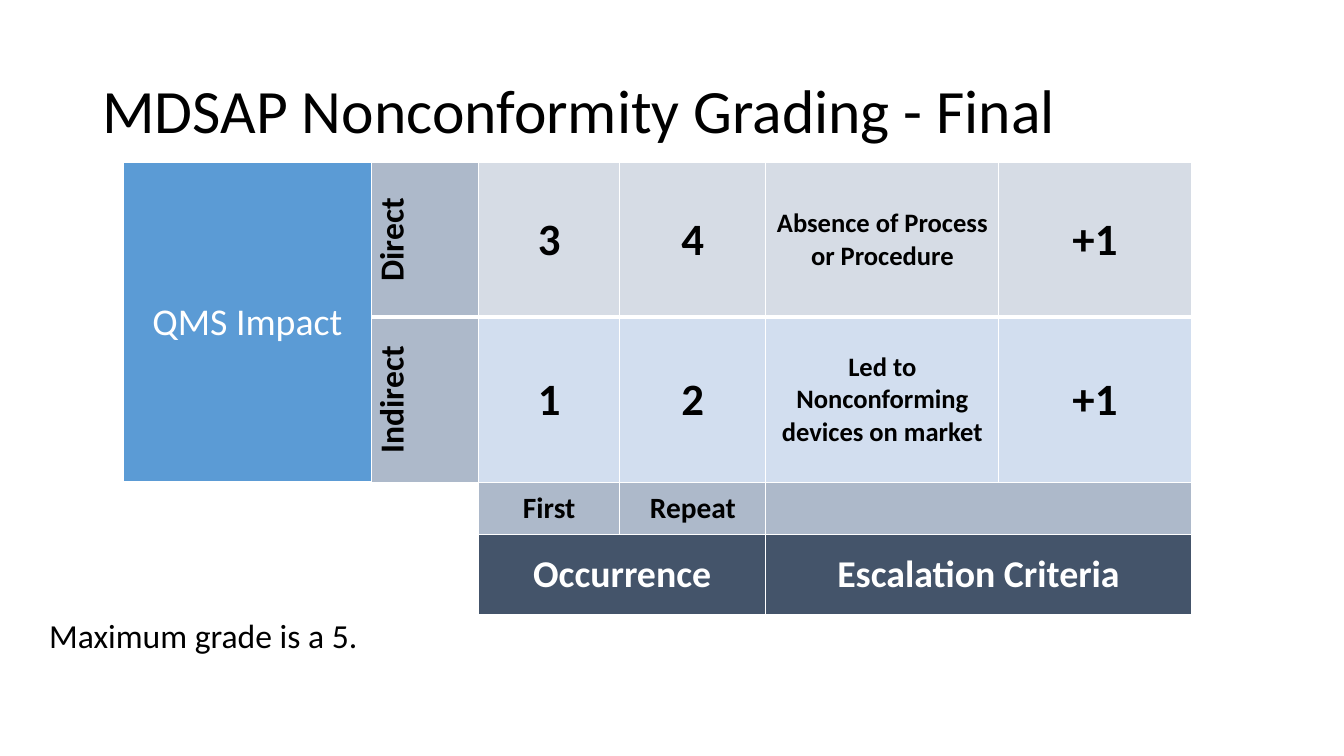
from lxml import etree
from pptx import Presentation
from pptx.dml.color import RGBColor
from pptx.enum.text import MSO_ANCHOR, PP_ALIGN
from pptx.oxml.ns import qn
from pptx.util import Cm, Pt

MIDDLE, TOP = MSO_ANCHOR.MIDDLE, MSO_ANCHOR.TOP
CENTER, LEFT = PP_ALIGN.CENTER, PP_ALIGN.LEFT

# Content
FONT = "Calibri"
COLORS = {"black": "000000", "white": "FFFFFF", "blue": "5B9BD5", "label": "ADB9CA",
          "direct": "D6DCE5", "indirect": "D2DEEF", "navy": "44546A"}
TITLE = "MDSAP Nonconformity Grading - Final"
NOTE = "Maximum grade is a 5."
GRID = [
    ["QMS Impact", "Direct", "3", "4", "Absence of Process or Procedure", "+1"],
    ["", "Indirect", "1", "2", "Led to Nonconforming devices on market", "+1"],
    ["", "", "First", "Repeat", "", ""],
    ["", "", "Occurrence", "", "Escalation Criteria", ""],
]
FILLS = [
    ["blue", "label"] + ["direct"] * 4,
    ["blue", "label"] + ["indirect"] * 4,
    ["white"] * 2 + ["label"] * 4,
    ["white"] * 2 + ["navy"] * 4,
]
GRADE_SIZES = [27, 24, 32, 32, 19, 32]
SIZES = [GRADE_SIZES, GRADE_SIZES, [21] * 6, [27] * 6]
MERGES = [((0, 0), (1, 0)), ((2, 4), (2, 5)), ((3, 2), (3, 3)), ((3, 4), (3, 5))]
COLUMN_WIDTHS = [6.27, 2.69, 3.56, 3.68, 5.87, 4.85]
ROW_HEIGHTS = [3.89, 4.17, 1.3, 2.03]


def write(frame, text, size, color="black", bold=False, align=LEFT, after=0, spacing=1.0):
    para = frame.paragraphs[0]
    para.alignment = align
    para.space_after = Pt(after)
    para.line_spacing = spacing
    span = para.add_run()
    span.text = text
    span.font.name = FONT
    span.font.size = Pt(size)
    span.font.bold = bold
    span.font.color.rgb = RGBColor.from_string(COLORS[color])


def add_text(page, text, left, top, width, height, anchor=TOP, inset=0.0, **style):
    box = page.shapes.add_textbox(Cm(left), Cm(top), Cm(width), Cm(height))
    frame = box.text_frame
    frame.word_wrap = True
    frame.vertical_anchor = anchor
    frame.margin_left = frame.margin_right = Cm(inset)
    frame.margin_top = frame.margin_bottom = Cm(inset / 2)
    write(frame, text, **style)


def set_borders(cell, bottom):
    properties = cell._tc.get_or_add_tcPr()
    widths = {"a:lnL": 1, "a:lnR": 1, "a:lnT": 1, "a:lnB": bottom}
    for index, (tag, width) in enumerate(widths.items()):
        line = etree.Element(qn(tag), w=str(Pt(width)))
        fill = etree.SubElement(line, qn("a:solidFill"))
        etree.SubElement(fill, qn("a:srgbClr"), val=COLORS["white"])
        properties.insert(index, line)


deck = Presentation()
deck.slide_width, deck.slide_height = Cm(33.87), Cm(19.05)
page = deck.slides.add_slide(deck.slide_layouts[6])

# Title and note
add_text(page, TITLE, 2.33, 1.01, 29.21, 3.68, anchor=MIDDLE, inset=0.25,
         size=44, spacing=0.9)
add_text(page, NOTE, 1.24, 15.5, 31.27, 1.2, size=24)

# Grading table
table = page.shapes.add_table(len(ROW_HEIGHTS), len(COLUMN_WIDTHS), Cm(3.1), Cm(4.1),
                              Cm(sum(COLUMN_WIDTHS)), Cm(sum(ROW_HEIGHTS))).table
table.first_row = table.horz_banding = False
for column, width in zip(table.columns, COLUMN_WIDTHS):
    column.width = Cm(width)
for row, height in zip(table.rows, ROW_HEIGHTS):
    row.height = Cm(height)
for start, end in MERGES:
    table.cell(*start).merge(table.cell(*end))

for r, texts in enumerate(GRID):
    for c, text in enumerate(texts):
        cell = table.cell(r, c)
        fill = FILLS[r][c]
        cell.fill.solid()
        cell.fill.fore_color.rgb = RGBColor.from_string(COLORS[fill])
        set_borders(cell, bottom=3 if r == 0 else 1)
        cell.vertical_anchor = MIDDLE
        cell.margin_left = cell.margin_right = Cm(0.25)
        cell.margin_top = cell.margin_bottom = 0
        if text:
            write(cell.text_frame, text, SIZES[r][c], bold=fill != "blue", align=CENTER,
                  after=6, color="white" if fill in ("blue", "navy") else "black")
        if text and c == 1:
            cell._tc.get_or_add_tcPr().set("vert", "vert270")

deck.save("out.pptx")
